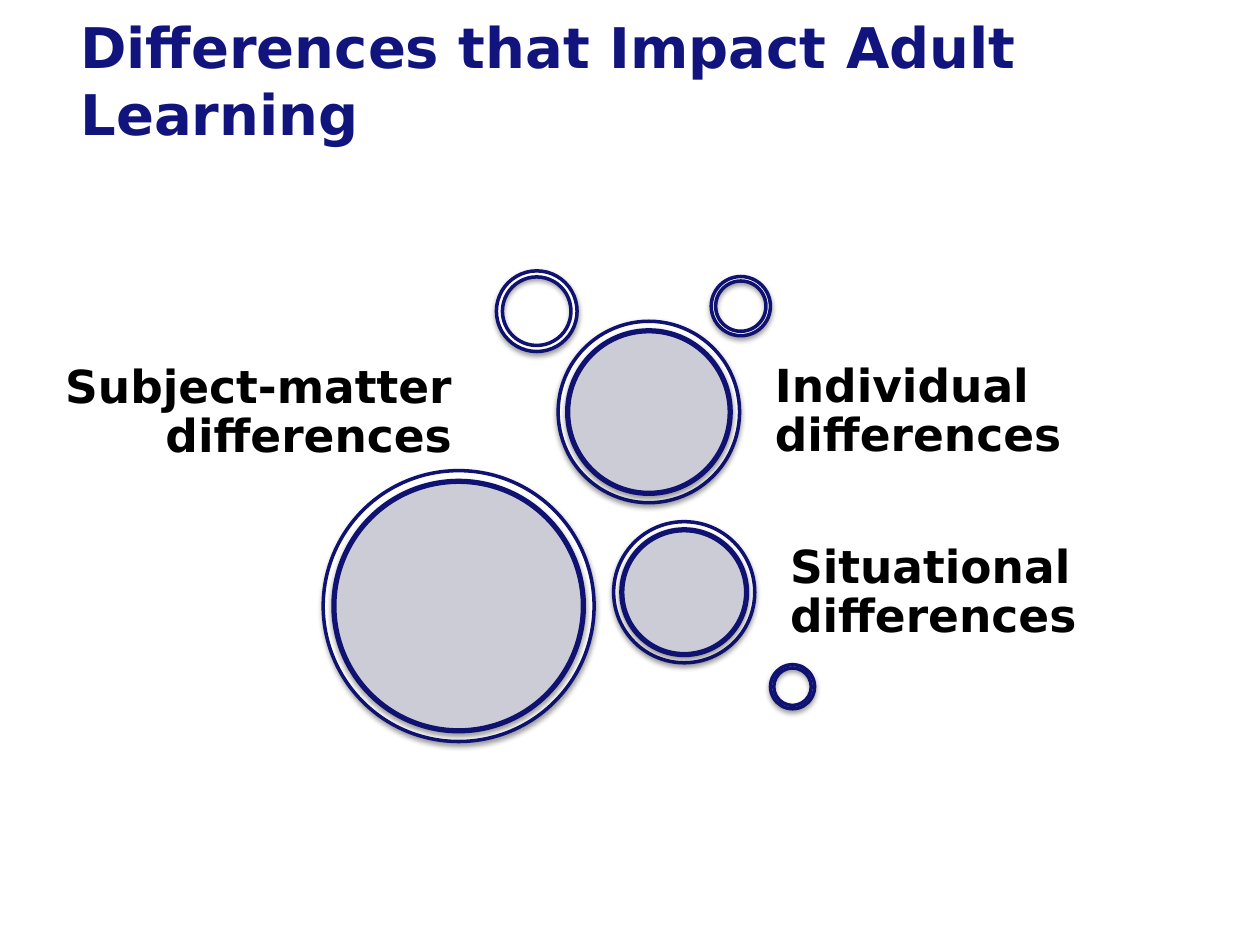
from lxml import etree
from pptx import Presentation
from pptx.dml.color import RGBColor
from pptx.enum.shapes import MSO_SHAPE
from pptx.enum.text import MSO_ANCHOR, PP_ALIGN
from pptx.oxml.ns import qn
from pptx.util import Inches, Pt

OVAL, DONUT = MSO_SHAPE.OVAL, MSO_SHAPE.DONUT
LEFT, RIGHT = PP_ALIGN.LEFT, PP_ALIGN.RIGHT
MIDDLE, BOTTOM = MSO_ANCHOR.MIDDLE, MSO_ANCHOR.BOTTOM

COLORS = {"title": "11147D", "outline": "0F1271", "disc": "CCCCD7",
          "white": "FFFFFF", "label": "000000", "shadow": "000000"}
FONT = "DejaVu Sans"

# Centre x, centre y, outer diameter, inner diameter
BUBBLES = [(3.64, 4.81, 2.15, 1.98), (5.43, 4.7, 1.12, 0.99), (5.15, 3.27, 1.44, 1.29)]
# Centre x, centre y, diameter
RINGS = [(4.26, 2.47, 0.64), (5.88, 2.43, 0.47), (6.29, 5.45, 0.35)]
# Text, box, alignment, anchor, bottom inset
LABELS = [
    ("Subject-matter differences", (0.44, 2.63, 3.19, 1.04), RIGHT, BOTTOM, 0),
    ("Situational differences", (6.23, 4.21, 3.19, 0.99), LEFT, MIDDLE, 0.04),
    ("Individual differences", (6.11, 2.63, 3.19, 1.29), LEFT, MIDDLE, 0.04),
]


def color(name):
    return RGBColor.from_string(COLORS[name])


def add_shadow(shape):
    effects = etree.SubElement(shape._element.spPr, qn("a:effectLst"))
    shadow = etree.SubElement(effects, qn("a:outerShdw"), blurRad=str(Pt(3.1)),
                              dist=str(Pt(1.6)), dir="5400000", rotWithShape="0")
    shade = etree.SubElement(shadow, qn("a:srgbClr"), val=COLORS["shadow"])
    etree.SubElement(shade, qn("a:alpha"), val="38000")


def add_circle(slide, kind, center_x, center_y, diameter, fill, line_width):
    shape = slide.shapes.add_shape(
        kind, Inches(center_x - diameter / 2), Inches(center_y - diameter / 2),
        Inches(diameter), Inches(diameter))
    shape.fill.solid()
    shape.fill.fore_color.rgb = color(fill)
    shape.line.color.rgb = color("outline")
    shape.line.width = Pt(line_width)
    add_shadow(shape)
    return shape


def add_bubble(slide, center_x, center_y, outer, inner):
    add_circle(slide, OVAL, center_x, center_y, outer, "white", 2)
    add_circle(slide, OVAL, center_x, center_y, inner, "disc", 3)


def add_ring(slide, center_x, center_y, diameter):
    ring = add_circle(slide, DONUT, center_x, center_y, diameter, "white", 2)
    ring.adjustments[0] = 0.075


def add_text(slide, text, box, size, font_color, frame_format, paragraph_format):
    frame = slide.shapes.add_textbox(*map(Inches, box)).text_frame
    paragraph = frame.paragraphs[0]
    paragraph.text = text
    font_format = {"name": FONT, "size": Pt(size), "bold": True}
    for target, values in ((frame, {"word_wrap": True, **frame_format}),
                           (paragraph, paragraph_format),
                           (paragraph.runs[0].font, font_format)):
        for name, value in values.items():
            setattr(target, name, value)
    paragraph.runs[0].font.color.rgb = color(font_color)
    return paragraph


def add_title(slide, text, box):
    paragraph = add_text(slide, text, box, 32, "title",
                         {"vertical_anchor": MIDDLE}, {"alignment": LEFT})
    properties = paragraph._p.get_or_add_pPr()
    properties.set("marL", str(Inches(0.21)))
    properties.set("indent", "0")


def add_label(slide, text, box, alignment, anchor, bottom):
    inset = Inches(0.04)
    add_text(slide, text, box, 26, "label",
             {"vertical_anchor": anchor, "margin_left": inset, "margin_top": inset,
              "margin_right": inset, "margin_bottom": Inches(bottom)},
             {"alignment": alignment, "line_spacing": 0.9})


def main():
    presentation = Presentation()
    presentation.slide_width, presentation.slide_height = Inches(10), Inches(7.5)
    slide = presentation.slides.add_slide(presentation.slide_layouts[6])
    add_title(slide, "Differences that Impact Adult Learning", (0.33, 0.17, 9.5, 0.92))
    for bubble in BUBBLES:
        add_bubble(slide, *bubble)
    for ring in RINGS:
        add_ring(slide, *ring)
    for label in LABELS:
        add_label(slide, *label)
    presentation.save("out.pptx")


if __name__ == "__main__":
    main()
